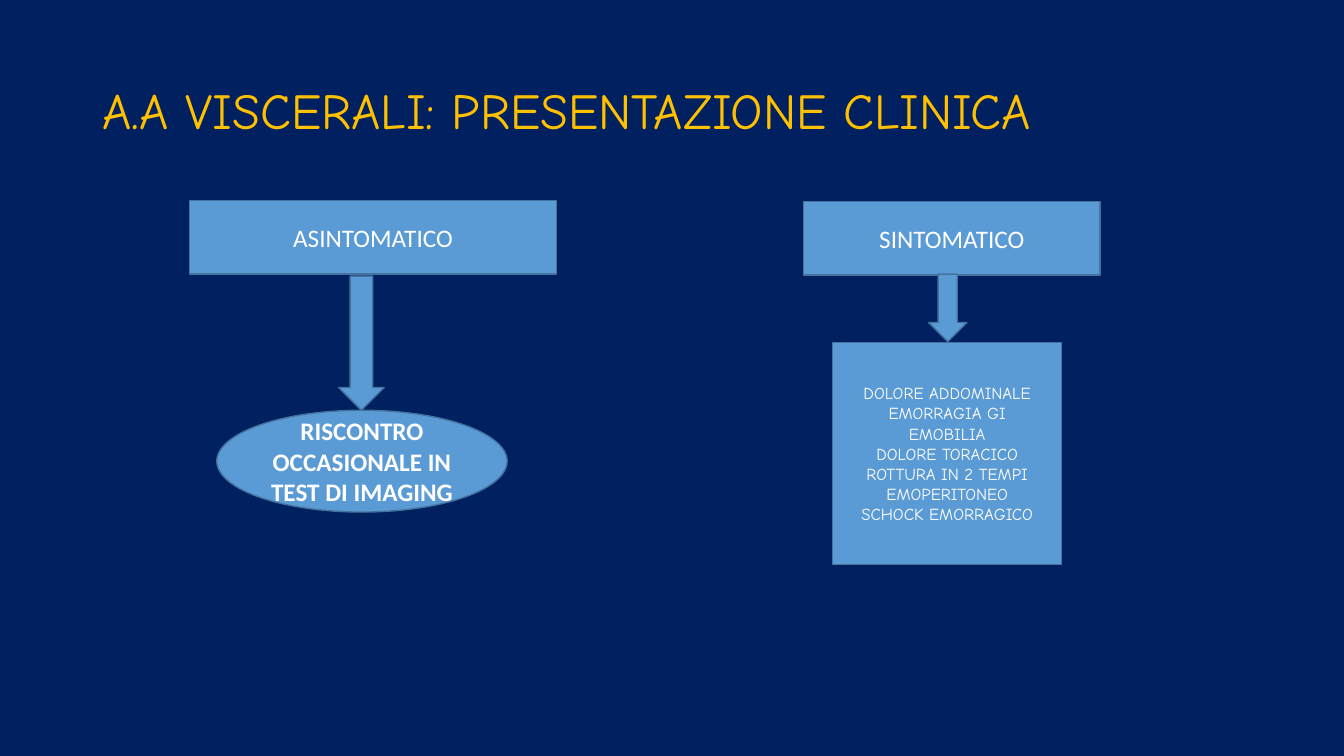
"""Build a slide on the clinical presentation of visceral artery aneurysms."""
from pptx import Presentation
from pptx.dml.color import RGBColor
from pptx.enum.shapes import MSO_SHAPE
from pptx.enum.text import MSO_ANCHOR, PP_ALIGN
from pptx.util import Inches, Pt

RECTANGLE, ELLIPSE, ARROW = MSO_SHAPE.RECTANGLE, MSO_SHAPE.OVAL, MSO_SHAPE.DOWN_ARROW
MIDDLE, LEFT, CENTER = MSO_ANCHOR.MIDDLE, PP_ALIGN.LEFT, PP_ALIGN.CENTER

NAVY, GOLD, BLUE, EDGE, WHITE = "002060", "FFC000", "5B9BD5", "43739E", "FFFFFF"
TITLE = {"name": "Comic Neue", "size": Pt(36)}
HEADING = {"name": "Calibri", "size": Pt(18)}
FINDING = {"name": "Calibri", "size": Pt(18), "bold": True}
SYMPTOM = {"name": "Comic Neue", "size": Pt(12)}


def color(value):
    return RGBColor.from_string(value)


def write(box, lines, style, ink, align, spacing):
    frame = box.text_frame
    frame.word_wrap = True
    frame.vertical_anchor = MIDDLE
    for index, line in enumerate(lines):
        para = frame.add_paragraph() if index else frame.paragraphs[0]
        para.alignment = align
        para.line_spacing = spacing
        span = para.add_run()
        span.text = line
        span.font.color.rgb = color(ink)
        for name, value in style.items():
            setattr(span.font, name, value)


deck = Presentation()
deck.slide_width, deck.slide_height = Inches(13.33), Inches(7.5)
page = deck.slides.add_slide(deck.slide_layouts[6])
page.background.fill.solid()
page.background.fill.fore_color.rgb = color(NAVY)

title = page.shapes.add_textbox(Inches(0.92), Inches(0.4), Inches(11.5), Inches(1.45))
write(title, ["A.A VISCERALI: PRESENTAZIONE CLINICA"], TITLE, GOLD, LEFT, 0.9)

symptoms = [
    "DOLORE ADDOMINALE",
    "EMORRAGIA GI",
    "EMOBILIA",
    "DOLORE TORACICO",
    "ROTTURA IN 2 TEMPI",
    "EMOPERITONEO",
    "SCHOCK EMORRAGICO",
]
blocks = [
    (RECTANGLE, 1.88, 1.99, 3.64, 0.73, ["ASINTOMATICO"], HEADING),
    (ARROW, 3.36, 2.74, 0.45, 1.33, [], {}),
    (ELLIPSE, 2.15, 4.07, 2.88, 1.01, ["RISCONTRO OCCASIONALE IN TEST DI IMAGING"], FINDING),
    (RECTANGLE, 7.97, 2, 2.94, 0.73, ["SINTOMATICO"], HEADING),
    (ARROW, 9.21, 2.72, 0.38, 0.67, [], {}),
    (RECTANGLE, 8.26, 3.4, 2.27, 2.2, symptoms, SYMPTOM),
]
for kind, left, top, width, height, lines, style in blocks:
    box = page.shapes.add_shape(kind, Inches(left), Inches(top), Inches(width), Inches(height))
    box.shadow.inherit = False
    box.fill.solid()
    box.fill.fore_color.rgb = color(BLUE)
    box.line.color.rgb = color(EDGE)
    box.line.width = Pt(1)
    write(box, lines, style, WHITE, CENTER, 1.0)

deck.save("out.pptx")
